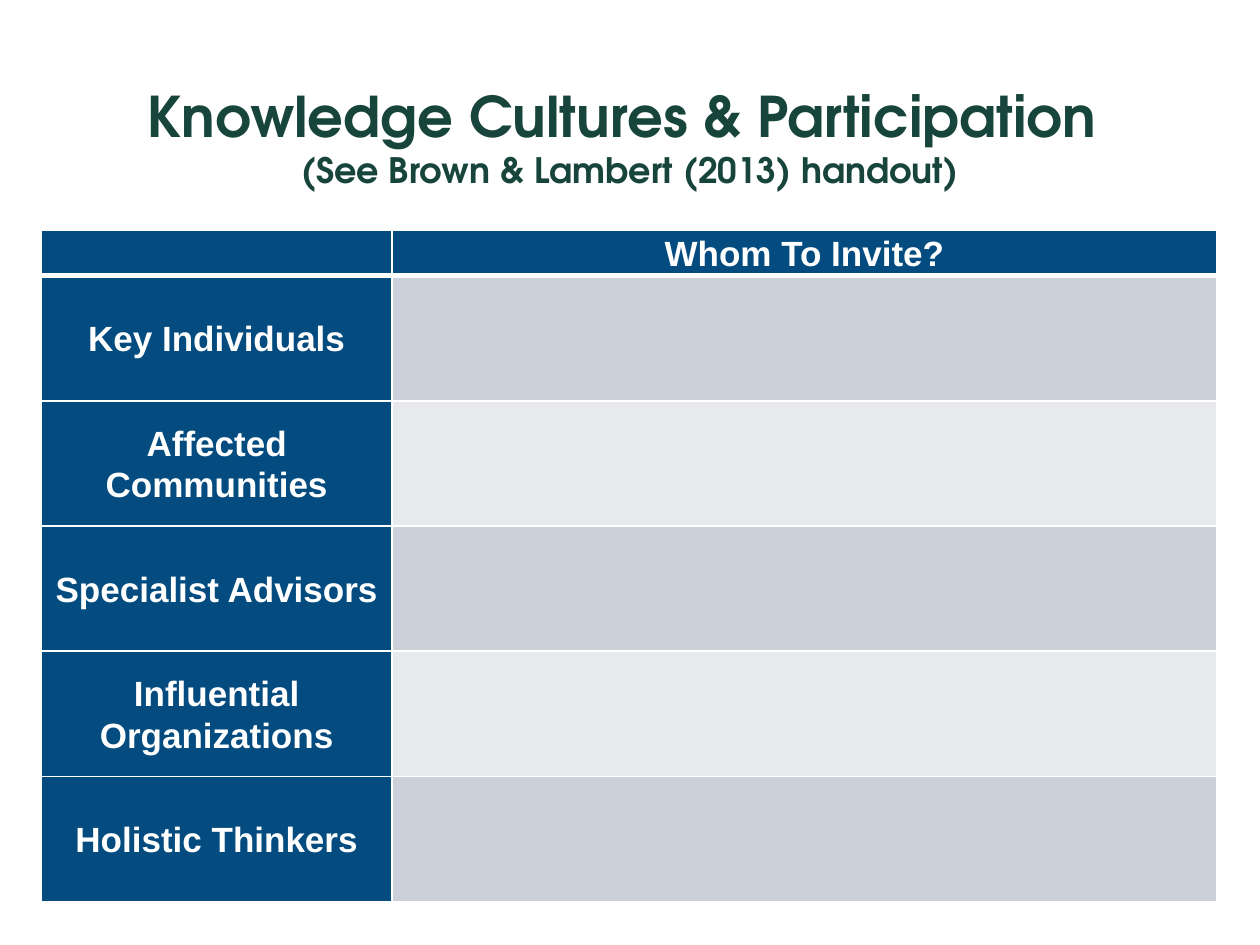
from dataclasses import dataclass

from lxml.etree import SubElement
from pptx import Presentation
from pptx.dml.color import RGBColor
from pptx.enum.text import MSO_ANCHOR, PP_ALIGN
from pptx.oxml.ns import qn
from pptx.util import Inches, Pt


@dataclass(frozen=True)
class Theme:
    green: str = "18453B"
    blue: str = "044C7F"
    white: str = "FFFFFF"
    bands: tuple = ("CCD0D8", "E7E9EC")
    head: str = "TeX Gyre Adventor"
    body: str = "Arial"
    big: int = 32
    small: int = 20
    thin: int = 1
    thick: int = 3


THEME = Theme()
GROUPS = [
    "Key Individuals",
    "Affected Communities",
    "Specialist Advisors",
    "Influential Organizations",
    "Holistic Thinkers",
]


def write(para, text, *, font, size, color):
    """Add a bold, centred run to a paragraph."""
    para.alignment = PP_ALIGN.CENTER
    run = para.add_run()
    run.text = text
    run.font.name = font
    run.font.size = Pt(size)
    run.font.bold = True
    run.font.color.rgb = RGBColor.from_string(color)


def border(cell, **widths):
    """Draw white cell edges; must run before the cell is filled."""
    props = cell._tc.get_or_add_tcPr()
    for side in ("L", "R", "T", "B"):
        width = widths.get(side, THEME.thin)
        line = SubElement(props, qn(f"a:ln{side}"), w=str(Pt(width)))
        fill = SubElement(line, qn("a:solidFill"))
        SubElement(fill, qn("a:srgbClr"), val=THEME.white)


def style(cell, color, text="", **widths):
    """Give a cell its edges, fill, margins and label."""
    border(cell, **widths)
    cell.fill.solid()
    cell.fill.fore_color.rgb = RGBColor.from_string(color)
    cell.margin_left = cell.margin_right = Inches(0.02)
    cell.margin_top = cell.margin_bottom = 0
    cell.vertical_anchor = MSO_ANCHOR.MIDDLE
    if text:
        para = cell.text_frame.paragraphs[0]
        para.line_spacing = 1.07
        write(para, text, font=THEME.body, size=THEME.small, color=THEME.white)


def add_title(slide, left, top, width, height):
    frame = slide.shapes.add_textbox(left, top, width, height).text_frame
    frame.word_wrap = True
    frame.vertical_anchor = MSO_ANCHOR.MIDDLE
    para = frame.paragraphs[0]
    look = dict(font=THEME.head, color=THEME.green)
    write(para, "Knowledge Cultures & Participation ", size=THEME.big, **look)
    para.add_line_break()
    write(para, "(See Brown & Lambert (2013) handout)", size=THEME.small, **look)


def add_grid(slide, left, top, width, height):
    table = slide.shapes.add_table(
        len(GROUPS) + 1, 2, left, top, width, height
    ).table
    table.columns[0].width = Inches(2.78)
    table.columns[1].width = width - Inches(2.78)

    # Header row
    first = Inches(0.33)
    table.rows[0].height = first
    for col, text in enumerate(("", "Whom To Invite?")):
        style(table.cell(0, col), THEME.blue, text, B=THEME.thick)

    # One equal row per group, with banded answer cells
    for row, group in enumerate(GROUPS, 1):
        table.rows[row].height = (height - first) // len(GROUPS)
        edge = THEME.thick if row == 1 else THEME.thin
        band = THEME.bands[(row - 1) % 2]
        style(table.cell(row, 0), THEME.blue, group, T=edge)
        style(table.cell(row, 1), band, T=edge)


def main():
    deck = Presentation()
    deck.slide_width, deck.slide_height = Inches(10), Inches(7.5)
    slide = deck.slides.add_slide(deck.slide_layouts[6])
    add_title(slide, Inches(0.5), Inches(0.58), Inches(9), Inches(1))
    add_grid(slide, Inches(0.33), Inches(1.83), Inches(9.33), Inches(5.3))
    deck.save("out.pptx")


if __name__ == "__main__":
    main()
